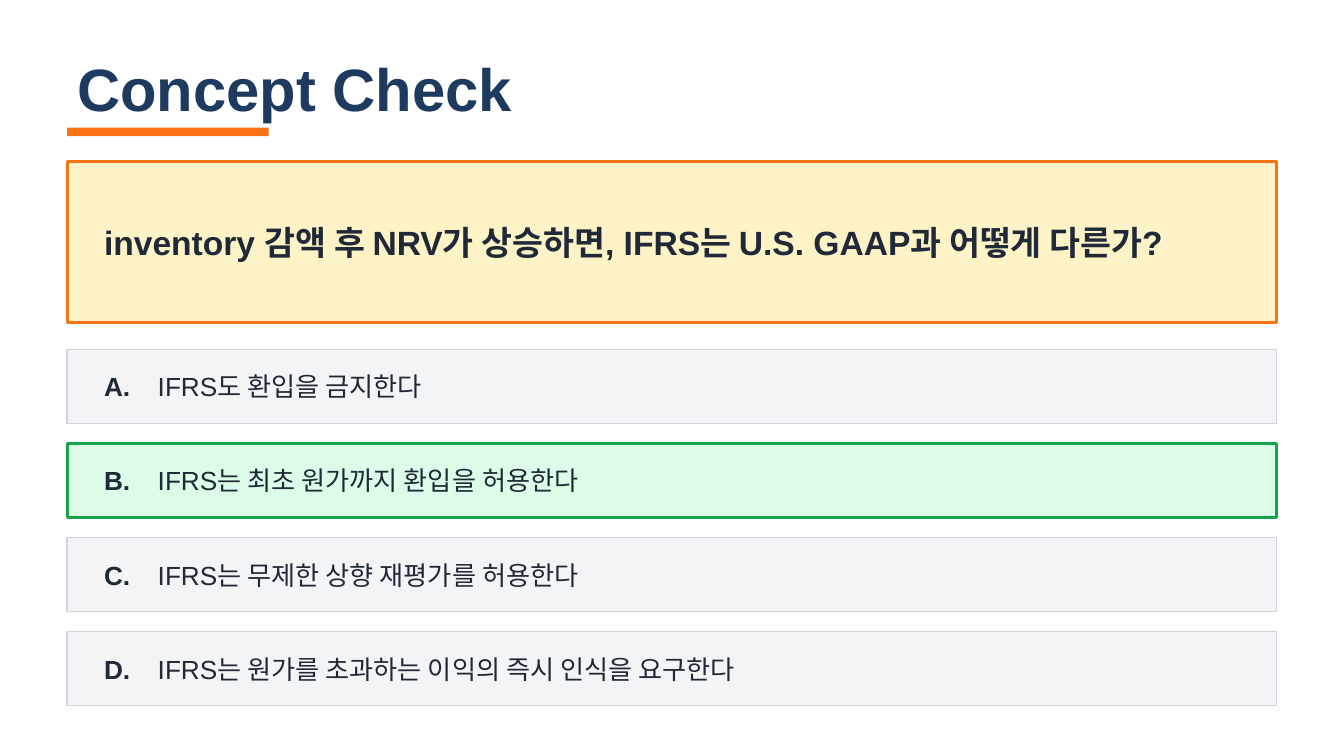
from pptx import Presentation
from pptx.dml.color import RGBColor
from pptx.enum.shapes import MSO_SHAPE
from pptx.enum.text import MSO_ANCHOR, MSO_AUTO_SIZE, PP_ALIGN
from pptx.util import Pt

TITLE = "Concept Check"
QUESTION = "inventory 감액 후 NRV가 상승하면, IFRS는 U.S. GAAP과 어떻게 다른가?"
CHOICES = [
    ("A.", "IFRS도 환입을 금지한다"),
    ("B.", "IFRS는 최초 원가까지 환입을 허용한다"),
    ("C.", "IFRS는 무제한 상향 재평가를 허용한다"),
    ("D.", "IFRS는 원가를 초과하는 이익의 즉시 인식을 요구한다"),
]
ANSWER = "B."

NAVY = RGBColor(0x1E, 0x3A, 0x5F)
INK = RGBColor(0x1F, 0x29, 0x37)
ORANGE = RGBColor(0xF9, 0x73, 0x16)
CREAM = RGBColor(0xFE, 0xF3, 0xC7)
GRAY = RGBColor(0xF3, 0xF4, 0xF6)
EDGE = RGBColor(0xD1, 0xD5, 0xDB)
MINT = RGBColor(0xDC, 0xFC, 0xE7)
GREEN = RGBColor(0x16, 0xA3, 0x4A)

LEFT, WIDTH = 48, 864
ROW_TOP, ROW_STEP, ROW_HIGH = 249.6, 67.2, 52.8
MARK_LEFT, MARK_WIDTH = 67.2, 38.4
TEXT_LEFT, TEXT_WIDTH = 105.6, 787.2

deck = Presentation()
deck.slide_width, deck.slide_height = Pt(960), Pt(540)
slide = deck.slides.add_slide(deck.slide_layouts[5])


def put_text(text, left, top, wide, high, size=18.7, bold=False, color=INK,
             box=None, wrap=True):
    """Write text in a given placeholder, or in a new text box."""
    if box is None:
        box = slide.shapes.add_textbox(0, 0, 0, 0)
    box.left, box.top, box.width, box.height = map(Pt, (left, top, wide, high))
    frame = box.text_frame
    frame.text = text
    frame.word_wrap = wrap
    frame.auto_size = MSO_AUTO_SIZE.NONE
    frame.vertical_anchor = MSO_ANCHOR.MIDDLE
    line = frame.paragraphs[0]
    line.alignment = PP_ALIGN.LEFT
    font = line.runs[0].font
    font.name, font.size, font.bold = "Arial", Pt(size), bold
    font.color.rgb = color


def add_bar(left, top, wide, high, fill, edge=None, weight=1):
    bar = slide.shapes.add_shape(MSO_SHAPE.RECTANGLE, *map(Pt, (left, top, wide, high)))
    bar.shadow.inherit = False
    bar.fill.solid()
    bar.fill.fore_color.rgb = fill
    if edge is None:
        bar.line.fill.background()
    else:
        bar.line.color.rgb = edge
        bar.line.width = Pt(weight)


put_text(TITLE, LEFT, 28.8, WIDTH, 67.2, size=42.7, bold=True, color=NAVY,
         box=slide.shapes.title)
add_bar(LEFT, 91.2, 144, 6, ORANGE)

add_bar(LEFT, 115.2, WIDTH, 115.2, CREAM, ORANGE, 2)
put_text(QUESTION, MARK_LEFT, 134.4, 816, 76.8, size=24, bold=True, wrap=False)

for row, (mark, choice) in enumerate(CHOICES):
    top = ROW_TOP + row * ROW_STEP
    look = (MINT, GREEN, 2) if mark == ANSWER else (GRAY, EDGE, 1)
    add_bar(LEFT, top, WIDTH, ROW_HIGH, *look)
    put_text(mark, MARK_LEFT, top, MARK_WIDTH, ROW_HIGH, bold=True)
    put_text(choice, TEXT_LEFT, top, TEXT_WIDTH, ROW_HIGH)

deck.save("out.pptx")
